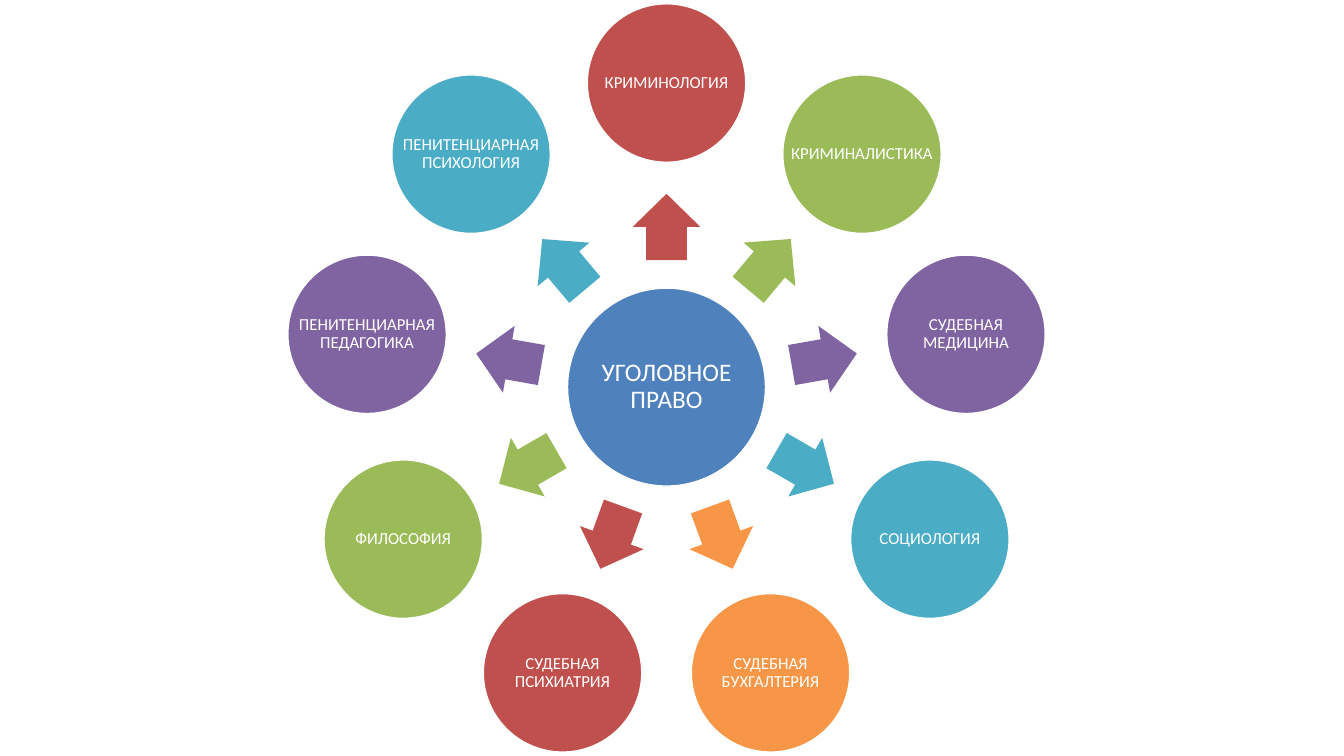
from math import cos, radians, sin

from pptx import Presentation
from pptx.dml.color import RGBColor
from pptx.enum.shapes import MSO_SHAPE
from pptx.enum.text import MSO_ANCHOR, PP_ALIGN
from pptx.util import Pt

WHITE = RGBColor(0xFF, 0xFF, 0xFF)
BLUE = RGBColor(0x4F, 0x81, 0xBD)
RED = RGBColor(0xC0, 0x50, 0x4D)
GREEN = RGBColor(0x9B, 0xBB, 0x59)
PURPLE = RGBColor(0x80, 0x64, 0xA2)
TEAL = RGBColor(0x4B, 0xAC, 0xC6)
ORANGE = RGBColor(0xF7, 0x96, 0x46)

CENTER_X, CENTER_Y = 476.1, 276.5
HUB_DIAMETER, SCIENCE_DIAMETER = 142.4, 114.2
SCIENCE_ORBIT, ARROW_ORBIT = 217.2, 114.4
ARROW_LENGTH, ARROW_WIDTH = 47.3, 48.4

# Clockwise from the top
SCIENCES = [
    ("КРИМИНОЛОГИЯ", RED),
    ("КРИМИНАЛИСТИКА", GREEN),
    ("СУДЕБНАЯ МЕДИЦИНА", PURPLE),
    ("СОЦИОЛОГИЯ", TEAL),
    ("СУДЕБНАЯ БУХГАЛТЕРИЯ", ORANGE),
    ("СУДЕБНАЯ ПСИХИАТРИЯ", RED),
    ("ФИЛОСОФИЯ", GREEN),
    ("ПЕНИТЕНЦИАРНАЯ ПЕДАГОГИКА", PURPLE),
    ("ПЕНИТЕНЦИАРНАЯ ПСИХОЛОГИЯ", TEAL),
]


class RadialDiagram:
    font_name = "Calibri"
    text_color = WHITE
    outline_width = 2

    def __init__(self, slide):
        self.shapes = slide.shapes.add_group_shape().shapes

    def add_filled(self, kind, x, y, width, height, color):
        """Add a filled shape centred on x, y."""
        shape = self.shapes.add_shape(
            kind, Pt(x - width / 2), Pt(y - height / 2), Pt(width), Pt(height))
        shape.shadow.inherit = False
        shape.fill.solid()
        shape.fill.fore_color.rgb = color
        return shape

    def add_circle(self, text, x, y, diameter, color, size, inset):
        circle = self.add_filled(MSO_SHAPE.OVAL, x, y, diameter, diameter, color)
        circle.line.color.rgb = WHITE
        circle.line.width = Pt(self.outline_width)
        self.add_label(text, circle, size, inset)

    def add_label(self, text, circle, size, inset):
        """Label the full width of a circle, wider than its own text area."""
        label = self.shapes.add_textbox(
            circle.left, circle.top, circle.width, circle.height)
        frame = label.text_frame
        frame.word_wrap = True
        frame.vertical_anchor = MSO_ANCHOR.MIDDLE
        frame.margin_left = frame.margin_right = Pt(inset)
        frame.margin_top = frame.margin_bottom = Pt(inset)
        paragraph = frame.paragraphs[0]
        paragraph.alignment = PP_ALIGN.CENTER
        paragraph.line_spacing = 0.9
        run = paragraph.add_run()
        run.text = text
        run.font.name = self.font_name
        run.font.size = Pt(size)
        run.font.color.rgb = self.text_color

    def add_arrow(self, x, y, angle, color):
        arrow = self.add_filled(
            MSO_SHAPE.RIGHT_ARROW, x, y, ARROW_LENGTH, ARROW_WIDTH, color)
        arrow.line.fill.background()
        arrow.adjustments[0] = 0.6
        arrow.adjustments[1] = 0.5
        arrow.rotation = angle


def orbit_point(radius, angle):
    return (CENTER_X + radius * cos(radians(angle)),
            CENTER_Y + radius * sin(radians(angle)))


def main():
    presentation = Presentation()
    presentation.slide_width = Pt(960)
    presentation.slide_height = Pt(540)
    slide = presentation.slides.add_slide(presentation.slide_layouts[6])

    diagram = RadialDiagram(slide)
    diagram.add_circle("УГОЛОВНОЕ ПРАВО", CENTER_X, CENTER_Y,
                       HUB_DIAMETER, BLUE, size=18, inset=1.8)
    for index, (name, color) in enumerate(SCIENCES):
        angle = (270 + index * 360 / len(SCIENCES)) % 360
        diagram.add_arrow(*orbit_point(ARROW_ORBIT, angle), angle, color)
        diagram.add_circle(name, *orbit_point(SCIENCE_ORBIT, angle),
                           SCIENCE_DIAMETER, color, size=12, inset=1.2)

    presentation.save("out.pptx")


if __name__ == "__main__":
    main()
